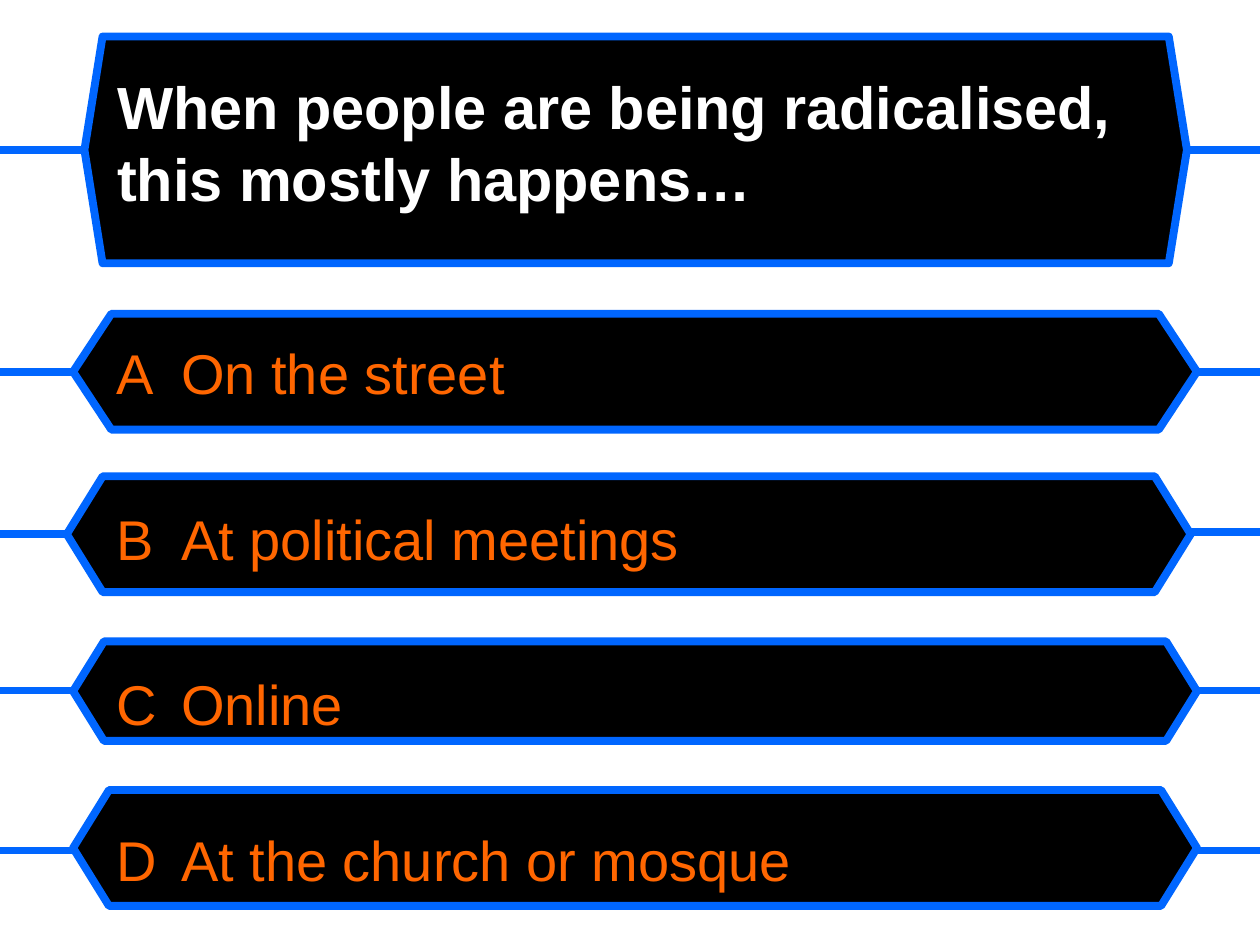
from dataclasses import dataclass

from lxml import etree
from pptx import Presentation
from pptx.dml.color import RGBColor
from pptx.enum import shapes, text
from pptx.oxml.ns import qn
from pptx.util import Inches, Pt

BLACK, BLUE, ORANGE, WHITE = "000000", "0066FF", "FF6600", "FFFFFF"
FONT = "Arial"
SLIDE_WIDTH, SLIDE_HEIGHT = 10, 7.5
LETTER_INDENT = 0.51


@dataclass
class Panel:
    """A hexagon with a line from each side to the slide edge."""
    left: float
    top: float
    width: float
    height: float
    point: float
    left_line: float
    right_line: float


@dataclass
class Answer:
    letter: str
    wording: str
    space_before: float


QUESTION = "When people are being radicalised, this mostly happens…"
PANELS = [
    Panel(0.67, 0.29, 8.75, 1.80, 0.08, 1.19, 1.19),
    Panel(0.58, 2.49, 8.92, 0.92, 0.33, 2.95, 2.95),
    Panel(0.53, 3.78, 8.92, 0.92, 0.31, 4.24, 4.22),
    Panel(0.58, 5.09, 8.92, 0.79, 0.31, 5.48, 5.48),
    Panel(0.58, 6.27, 8.92, 0.92, 0.31, 6.75, 6.75),
]
ANSWERS = [
    Answer("A", "On the street", 0),
    Answer("B", "At political meetings", 56),
    Answer("C", "Online", 56),
    Answer("D", "At the church or mosque", 51),
]


def color(value: str) -> RGBColor:
    return RGBColor.from_string(value)


def style_line(shape) -> None:
    shape.line.color.rgb = color(BLUE)
    shape.line.width = Pt(4.5)


def add_side_line(slide, start: float, end: float, y: float) -> None:
    line = slide.shapes.add_connector(
        shapes.MSO_CONNECTOR.STRAIGHT,
        Inches(start), Inches(y), Inches(end), Inches(y))
    style_line(line)
    etree.SubElement(line._element.spPr, qn("a:effectLst"))


def add_panel(slide, panel: Panel) -> None:
    hexagon = slide.shapes.add_shape(
        shapes.MSO_SHAPE.HEXAGON, Inches(panel.left), Inches(panel.top),
        Inches(panel.width), Inches(panel.height))
    hexagon.adjustments[0] = panel.point
    hexagon.shadow.inherit = False
    hexagon.fill.solid()
    hexagon.fill.fore_color.rgb = color(BLACK)
    style_line(hexagon)
    add_side_line(slide, 0, panel.left, panel.left_line)
    add_side_line(slide, panel.left + panel.width, SLIDE_WIDTH, panel.right_line)


def style_font(paragraph, size: float, value: str, bold: bool) -> None:
    paragraph.alignment = text.PP_ALIGN.LEFT
    paragraph.font.name = FONT
    paragraph.font.size = Pt(size)
    paragraph.font.bold = bold
    paragraph.font.color.rgb = color(value)


def set_title(slide, wording: str) -> None:
    title = slide.shapes.title
    title.left, title.top = Inches(0.83), Inches(0.13)
    title.width, title.height = Inches(8.82), Inches(1.99)
    frame = title.text_frame
    frame.text = wording
    frame.word_wrap = True
    frame.vertical_anchor = text.MSO_ANCHOR.MIDDLE
    style_font(frame.paragraphs[0], 34, WHITE, True)
    # Bring the title in front of the question panel
    slide.shapes._spTree.append(title._element)


def add_answers(slide, answers: list[Answer]) -> None:
    box = slide.shapes.add_textbox(
        Inches(0.83), Inches(2.64), Inches(8.33), Inches(4.8))
    frame = box.text_frame
    frame.word_wrap = True
    for index, answer in enumerate(answers):
        paragraph = frame.add_paragraph() if index else frame.paragraphs[0]
        paragraph.text = f"{answer.letter}\t{answer.wording}"
        # Hanging indent: the tab lines the wording up after the letter
        properties = paragraph._p.get_or_add_pPr()
        properties.set("marL", str(Inches(LETTER_INDENT)))
        properties.set("indent", str(-Inches(LETTER_INDENT)))
        paragraph.space_before = Pt(answer.space_before)
        style_font(paragraph, 32, ORANGE, False)


def main() -> None:
    presentation = Presentation()
    presentation.slide_width = Inches(SLIDE_WIDTH)
    presentation.slide_height = Inches(SLIDE_HEIGHT)
    slide = presentation.slides.add_slide(presentation.slide_layouts[5])

    # Panels with their side lines
    for panel in PANELS:
        add_panel(slide, panel)

    # Question and answers
    set_title(slide, QUESTION)
    add_answers(slide, ANSWERS)
    presentation.save("out.pptx")


if __name__ == "__main__":
    main()
